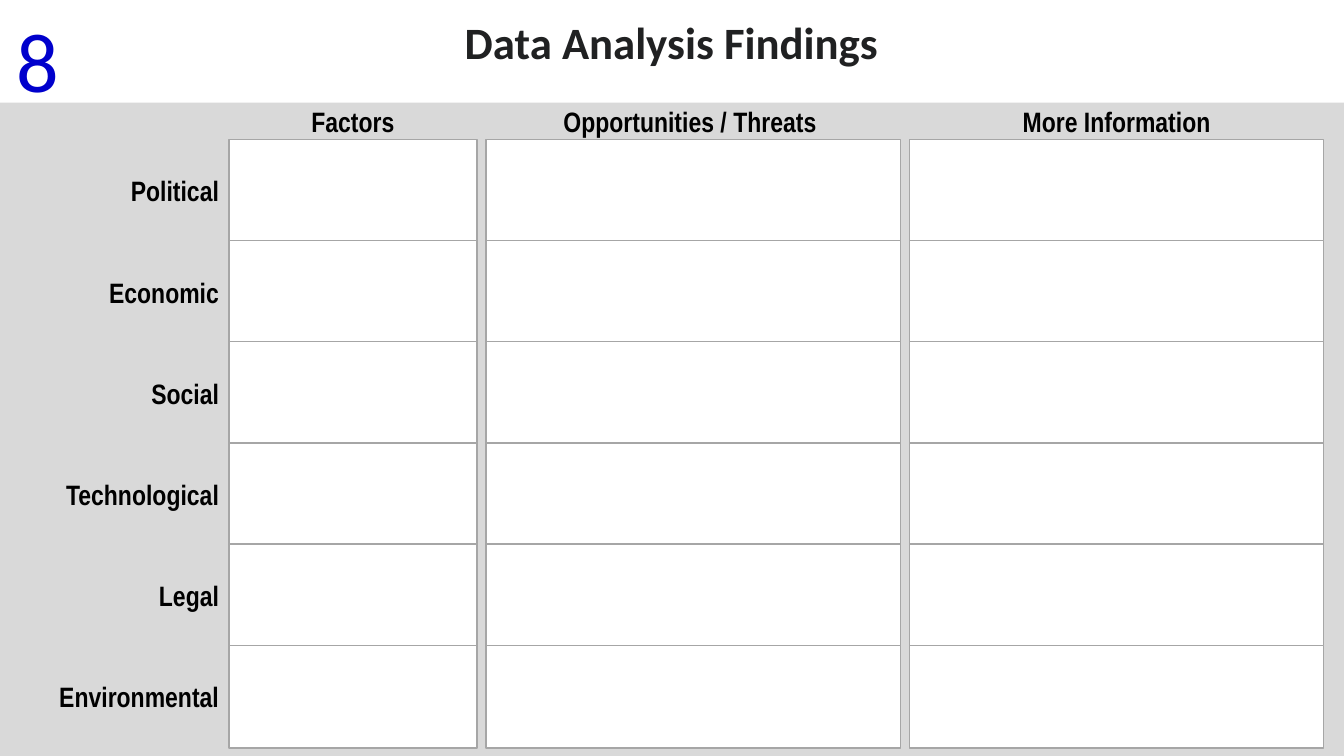
import pptx
import pptx.dml.color
import pptx.enum.shapes
import pptx.enum.text
import pptx.util

Cm = pptx.util.Cm
RGBColor = pptx.dml.color.RGBColor
Align = pptx.enum.text.PP_ALIGN
Anchor = pptx.enum.text.MSO_ANCHOR
Shape = pptx.enum.shapes.MSO_SHAPE

WHITE = RGBColor(0xFF, 0xFF, 0xFF)
BLACK = RGBColor(0, 0, 0)
INK = RGBColor(0x20, 0x21, 0x22)
BLUE = RGBColor(0, 0, 0xCC)
PANEL_GREY = RGBColor(0xD9, 0xD9, 0xD9)
BORDER_GREY = RGBColor(0xA6, 0xA6, 0xA6)

SLIDE_WIDTH, SLIDE_HEIGHT = 33.87, 19.05
PANEL_TOP = 2.59
COLUMNS = [("Factors", 6.25), ("Opportunities / Threats ", 10.44), ("More Information", 10.44)]
FACTORS = ["Political", "Economic", "Social", "Technological", "Legal", "Environmental"]
GRID_LEFT, GRID_TOP = 5.77, 3.51
COLUMN_GAP = 0.23
ROW_PITCH, CELL_HEIGHT = 2.55, 2.59
LABEL_LEFT, LABEL_HEIGHT = 0.5, 1.12
HEADER_TOP = 2.49


class Sheet:
    """Draws styled elements on one slide."""

    def __init__(self, page):
        self.page = page
        self.heading_font = "Calibri"
        self.label_font = "Arial Narrow"

    def text(self, shapes, words, left, top, width, height, size, font, color,
             align=Align.CENTER, bold=True, anchor=Anchor.TOP, wrap=True):
        box = shapes.add_textbox(Cm(left), Cm(top), Cm(width), Cm(height))
        frame = box.text_frame
        frame.text = words
        frame.word_wrap = wrap
        frame.auto_size = pptx.enum.text.MSO_AUTO_SIZE.SHAPE_TO_FIT_TEXT
        frame.vertical_anchor = anchor
        para = frame.paragraphs[0]
        para.alignment = align
        span = para.runs[0]
        span.font.name = font
        span.font.size = pptx.util.Pt(size)
        span.font.bold = bold
        span.font.color.rgb = color

    def heading(self, words, left, top, width, height, size, color, bold=True, wrap=True):
        self.text(self.page.shapes, words, left, top, width, height, size,
                  self.heading_font, color, bold=bold, wrap=wrap)

    def label(self, shapes, words, left, top, width, align):
        self.text(shapes, words, left, top, width, LABEL_HEIGHT, 20,
                  self.label_font, BLACK, align, anchor=Anchor.MIDDLE)

    def panel(self, left, top, width, height):
        panel = self.page.shapes.add_shape(
            Shape.RECTANGLE, Cm(left), Cm(top), Cm(width), Cm(height))
        panel.shadow.inherit = False
        panel.fill.solid()
        panel.fill.fore_color.rgb = PANEL_GREY
        panel.line.fill.background()

    def cell(self, shapes, left, top, width):
        cell = shapes.add_shape(
            Shape.ROUNDED_RECTANGLE, Cm(left), Cm(top), Cm(width), Cm(CELL_HEIGHT))
        cell.adjustments[0] = 0
        cell.shadow.inherit = False
        cell.fill.solid()
        cell.fill.fore_color.rgb = WHITE
        cell.line.color.rgb = BORDER_GREY
        cell.line.width = pptx.util.Pt(1)

    def factor_row(self, factor, top, spans):
        shapes = self.page.shapes.add_group_shape().shapes
        for left, width in spans:
            self.cell(shapes, left, top, width)
        label_top = top + (CELL_HEIGHT - LABEL_HEIGHT) / 2
        self.label(shapes, factor, LABEL_LEFT, label_top, GRID_LEFT - LABEL_LEFT, Align.RIGHT)


def main():
    deck = pptx.Presentation()
    deck.slide_width, deck.slide_height = Cm(SLIDE_WIDTH), Cm(SLIDE_HEIGHT)
    page = deck.slides.add_slide(deck.slide_layouts[6])
    sheet = Sheet(page)
    sheet.heading("Data Analysis Findings", 1.14, 0.25, 31.57, 1.63, 32, INK)
    sheet.heading("8", 0.15, 0.08, 1.6, 2.82, 60, BLUE, bold=False, wrap=False)
    sheet.panel(0, PANEL_TOP, SLIDE_WIDTH, SLIDE_HEIGHT - PANEL_TOP)

    spans = []
    left = GRID_LEFT
    for title, width in COLUMNS:
        sheet.label(page.shapes, title, left, HEADER_TOP, width, Align.CENTER)
        spans.append((left, width))
        left += width + COLUMN_GAP

    for row, factor in enumerate(FACTORS):
        sheet.factor_row(factor, GRID_TOP + row * ROW_PITCH, spans)

    deck.save("out.pptx")


if __name__ == "__main__":
    main()
